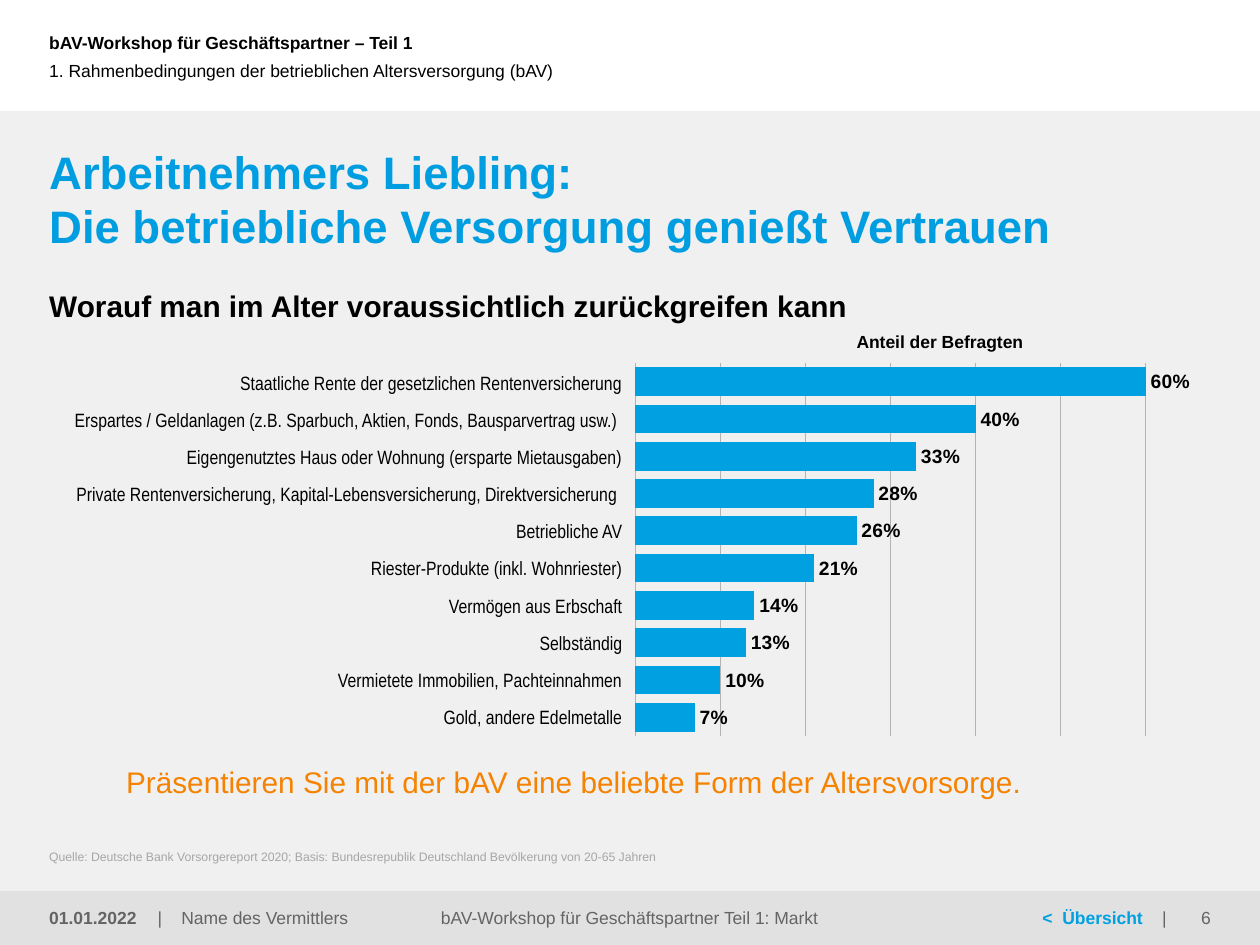
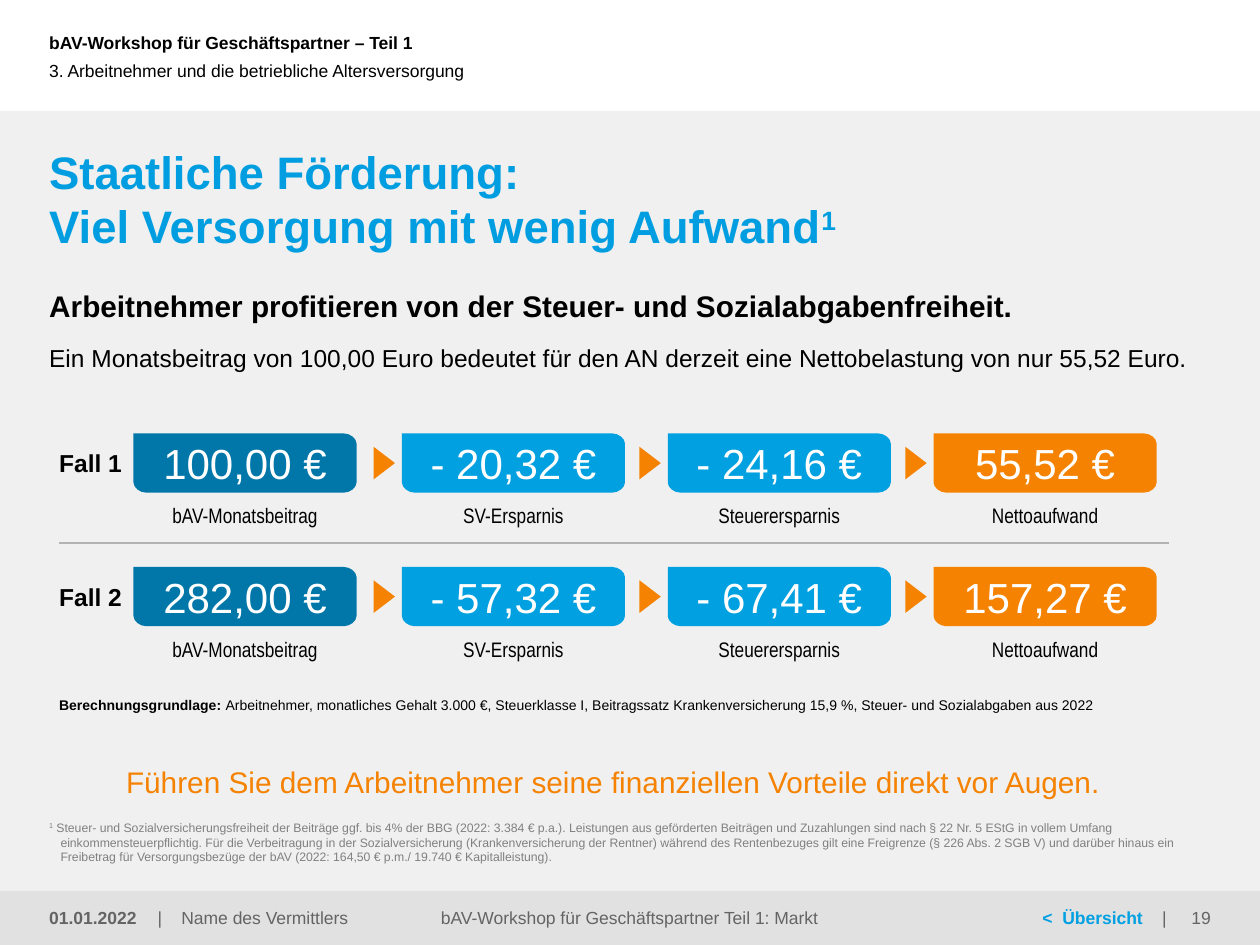
from lxml.etree import SubElement
from pptx import Presentation
from pptx.chart.data import CategoryChartData
from pptx.dml.color import RGBColor
from pptx.enum.chart import XL_CHART_TYPE as ChartType, XL_LABEL_POSITION as LabelPosition
from pptx.enum.shapes import MSO_CONNECTOR as Connector, MSO_SHAPE as Preset
from pptx.enum.text import MSO_ANCHOR as Anchor, MSO_AUTO_SIZE as AutoSize, PP_ALIGN as Align
from pptx.oxml.ns import qn
from pptx.util import Inches, Pt

# ---- Content ----
WORKSHOP = "bAV-Workshop für Geschäftspartner – Teil 1"
DATE = "01.01.2022"
FOOTER = "bAV-Workshop für Geschäftspartner Teil 1: Markt"

TRUST = {
    "title": ["Arbeitnehmers Liebling:\vDie betriebliche Versorgung genießt Vertrauen"],
    "chapter": ["1. Rahmenbedingungen der betrieblichen Altersversorgung (bAV)"],
    "headline": ["Worauf man im Alter voraussichtlich zurückgreifen kann"],
    "message": ["Präsentieren Sie mit der bAV eine beliebte Form der Altersvorsorge."],
    "note": ["Quelle: Deutsche Bank Vorsorgereport 2020; "
             "Basis: Bundesrepublik Deutschland Bevölkerung von 20-65 Jahren"],
    "number": "6",
}
CHART_HEADING = "Anteil der Befragten"
SHARES = [
    ("Staatliche Rente der gesetzlichen Rentenversicherung", 0.60),
    ("Erspartes / Geldanlagen (z.B. Sparbuch, Aktien, Fonds, Bausparvertrag usw.) ", 0.40),
    ("Eigengenutztes Haus oder Wohnung (ersparte Mietausgaben)", 0.33),
    ("Private Rentenversicherung, Kapital-Lebensversicherung, Direktversicherung ", 0.28),
    ("Betriebliche AV", 0.26),
    ("Riester-Produkte (inkl. Wohnriester)", 0.21),
    ("Vermögen aus Erbschaft", 0.14),
    ("Selbständig", 0.13),
    ("Vermietete Immobilien, Pachteinnahmen", 0.10),
    ("Gold, andere Edelmetalle", 0.07),
]

SUPER = {"raised": True}
SUBSIDY = {
    "title": ["Staatliche Förderung:\vViel Versorgung mit wenig Aufwand", ("1", SUPER)],
    "chapter": ["3. Arbeitnehmer und die betriebliche Altersversorgung"],
    "headline": ["Arbeitnehmer profitieren von der Steuer- und Sozialabgabenfreiheit."],
    "message": ["Führen Sie dem Arbeitnehmer seine finanziellen Vorteile direkt vor Augen."],
    "note": [("1", SUPER),
             " Steuer- und Sozialversicherungsfreiheit der Beiträge ggf. bis 4% der BBG "
             "(2022: 3.384 € p.a.). Leistungen aus geförderten Beiträgen und Zuzahlungen sind "
             "nach § 22 Nr. 5 EStG in vollem Umfang einkommensteuerpflichtig. Für die "
             "Verbeitragung in der Sozialversicherung (Krankenversicherung der Rentner) während "
             "des Rentenbezuges gilt eine Freigrenze (§ 226 Abs. 2 SGB V) und darüber hinaus ein "
             "Freibetrag für Versorgungsbezüge der bAV (2022: 164,50 € p.m./ 19.740 € "
             "Kapitalleistung)."],
    "number": "19",
}
INTRO = ("Ein Monatsbeitrag von 100,00 Euro bedeutet für den AN derzeit "
         "eine Nettobelastung von nur 55,52 Euro.")
BASIS = [("Berechnungsgrundlage: ", {"bold": True}),
         "Arbeitnehmer, monatliches Gehalt 3.000 €, Steuerklasse I, Beitragssatz "
         "Krankenversicherung 15,9 %, Steuer- und Sozialabgaben aus 2022"]
# Caption, colour and left edge of each column
STEPS = [("bAV-Monatsbeitrag", "0077A8", 1.06), ("SV-Ersparnis", "00A0E1", 3.19),
         ("Steuerersparnis", "00A0E1", 5.3), ("Nettoaufwand", "F58200", 7.41)]
CASES = {
    "Fall 1": ["100,00 €", "- 20,32 €", "- 24,16 €", "55,52 €"],
    "Fall 2": ["282,00 €", "- 57,32 €", "- 67,41 €", "157,27 €"],
}

# ---- Shared look ----
WIDTH, HEIGHT = 10, 7.5
MARGIN = 0.39
HEADER_BOTTOM, FOOTER_TOP = 0.88, 7.07
FOOTER_HEIGHT = HEIGHT - FOOTER_TOP
BLUE, ORANGE, BLACK, WHITE = "00A0E1", "F58200", "000000", "FFFFFF"
DARK_GREY, LINE_GREY = "646464", "B3B3B3"
SANS, NARROW = "Arial", "Arial Narrow"
LINK = {"color": BLUE, "bold": True}
# One space widened by character spacing, in points
WIDE_GAP, SMALL_GAP = (" ", {"spacing": 8.3}), (" ", {"spacing": 2.8})

# Placeholder index: content key, position, text style
PLACEHOLDERS = {
    0: ("title", (MARGIN, 1.14, 9.22, 0.55), dict(size=26, color="009EE0", bold=True)),
    1: ("headline", (MARGIN, 2.28, 9.22, 0.29), dict(size=17, bold=True)),
    2: ("note", (MARGIN, 6.74, 9.21, 0.12), dict(size=7, anchor=Anchor.BOTTOM)),
    3: ("message", (1, 5.9, 8.61, 0.68),
        dict(size=17, color=ORANGE, anchor=Anchor.MIDDLE, insets=(0, 0, 0, 0.08))),
    4: ("chapter", (0, 0.25, 7.15, 0.63),
        dict(anchor=Anchor.MIDDLE, insets=(MARGIN, 0, 0, 0.01))),
}


def rgb(value):
    return RGBColor.from_string(value)


def place(shape, left, top, width, height):
    shape.left, shape.top = Inches(left), Inches(top)
    shape.width, shape.height = Inches(width), Inches(height)


def style_font(font, size, color=BLACK, bold=False, name=SANS):
    font.name, font.size, font.bold = name, Pt(size), bold
    font.color.rgb = rgb(color)


def write(shape, spans, size=10, color=BLACK, bold=False, name=SANS, align=Align.LEFT,
          anchor=Anchor.TOP, insets=(0, 0, 0, 0), hanging=0):
    """Fill a shape with one paragraph made of styled spans."""
    frame = shape.text_frame
    frame.auto_size, frame.word_wrap = AutoSize.NONE, True
    frame.vertical_anchor = anchor
    (frame.margin_left, frame.margin_top,
     frame.margin_right, frame.margin_bottom) = map(Inches, insets)

    para = frame.paragraphs[0]
    props = para._p.get_or_add_pPr()
    props.set("marL", str(Inches(hanging)))
    props.set("indent", str(-Inches(hanging)))
    SubElement(props, qn("a:buNone"))
    para.alignment = align
    para.space_before = para.space_after = Pt(0)

    for index, span in enumerate(spans):
        text, changes = span if isinstance(span, tuple) else (span, {})
        done = len(para.runs)
        if index == 0:
            para.text = text
        else:
            para.add_run().text = text
        for run in para.runs[done:]:
            style_font(run.font, size, changes.get("color", color),
                       changes.get("bold", bold), name)
            if changes.get("raised"):
                run._r.get_or_add_rPr().set("baseline", "30000")
            if "spacing" in changes:
                run._r.get_or_add_rPr().set("spc", str(round(changes["spacing"] * 100)))
    for line_break in para._p.findall(qn("a:br")):
        SubElement(line_break, qn("a:rPr"), sz=str(size * 100))


def add_text(page, area, spans, **style):
    box = page.shapes.add_textbox(*map(Inches, area))
    write(box, [spans] if isinstance(spans, str) else spans, **style)


def paint(shape, color):
    shape.shadow.inherit = False
    shape.fill.solid()
    shape.fill.fore_color.rgb = rgb(color)
    shape.line.fill.background()


def add_page(deck, content, note_style):
    """Create a page with bands, placeholders, header and footer."""
    page = deck.slides.add_slide(deck.slide_layouts[4])
    page.background.fill.solid()
    page.background.fill.fore_color.rgb = rgb(WHITE)

    # Bands lie behind the placeholders
    bands = [(HEADER_BOTTOM, "F0F0F0"), (FOOTER_TOP, "E1E1E1")]
    for depth, (top, color) in enumerate(bands, start=2):
        area = (0, top, WIDTH, HEIGHT - top)
        band = page.shapes.add_shape(Preset.RECTANGLE, *map(Inches, area))
        paint(band, color)
        page.shapes.element.insert(depth, band.element)

    for placeholder in page.placeholders:
        key, area, style = PLACEHOLDERS[placeholder.placeholder_format.idx]
        place(placeholder, *area)
        write(placeholder, content[key], **style, **(note_style if key == "note" else {}))

    add_text(page, (0, 0, 6.98, 0.67), WORKSHOP, bold=True, anchor=Anchor.MIDDLE,
             insets=(MARGIN, 0.05, 0.1, 0.05))

    # Footer parts: left, width, spans, style
    footer = [
        (0, 1.22, DATE, dict(bold=True, insets=(MARGIN, 0.05, 0.1, 0.05))),
        (1.25, 2.42, ["|", WIDE_GAP, "Name des Vermittlers"], {}),
        (3.02, 3.95, FOOTER, dict(align=Align.CENTER)),
        (6.88, 2.42, [("<", LINK), SMALL_GAP, ("Übersicht", LINK), WIDE_GAP, "|"],
         dict(align=Align.RIGHT, insets=(0, 0, 0.04, 0))),
        (9.06, 0.94, content["number"],
         dict(align=Align.RIGHT, insets=(0.1, 0.05, MARGIN, 0.05))),
    ]
    for left, width, spans, style in footer:
        add_text(page, (left, FOOTER_TOP, width, FOOTER_HEIGHT), spans,
                 color=DARK_GREY, anchor=Anchor.MIDDLE, **style)
    return page


def add_share_chart(page):
    data = CategoryChartData(number_format="0%")
    data.categories = [str(rank) for rank in range(1, len(SHARES) + 1)]
    data.add_series("Series 1", [share for _, share in SHARES])
    area = (4.94, 2.76, 4.61, 3.19)
    chart = page.shapes.add_chart(ChartType.BAR_CLUSTERED, *map(Inches, area), data).chart
    chart.has_legend = chart.has_title = False
    style_font(chart.font, 11.8, name=NARROW)

    chart.category_axis.reverse_order = True
    chart.category_axis.visible = False
    scale = chart.value_axis
    scale.minimum_scale, scale.maximum_scale, scale.major_unit = 0, 0.66, 0.1
    scale.has_major_gridlines = True
    scale.major_gridlines.format.line.color.rgb = rgb(LINE_GREY)
    scale.major_gridlines.format.line.width = Pt(0.75)
    scale.visible = False

    plot = chart.plots[0]
    plot.gap_width, plot.vary_by_categories = 30, False
    bars = plot.series[0]
    bars.format.fill.solid()
    bars.format.fill.fore_color.rgb = rgb(BLUE)
    labels = bars.data_labels
    labels.show_value, labels.position = True, LabelPosition.OUTSIDE_END
    labels.number_format, labels.number_format_is_linked = "0%", False
    style_font(labels.font, 11, bold=True)

    # Fixed inner plot area so bars meet their row labels
    plot_area = chart._chartSpace.chart.plotArea
    for old in plot_area.findall(qn("c:layout")):
        plot_area.remove(old)
    layout = SubElement(plot_area, qn("c:layout"))
    plot_area.insert(0, layout)
    manual = SubElement(layout, qn("c:manualLayout"))
    settings = [("layoutTarget", "inner"), ("xMode", "edge"), ("yMode", "edge"),
                ("x", "0.022"), ("y", "0.038"), ("w", "0.967"), ("h", "0.928")]
    for tag, value in settings:
        SubElement(manual, qn("c:" + tag), val=value)


def add_card(page, left, top, width, height, color, amount):
    """Amount card with a square top left corner and three round ones."""
    right, bottom = left + width, top + height
    far_x, far_y = 0.1, 0.08
    near_x, near_y = far_x / 2, far_y / 2
    # Each corner: start, two control points, end
    corners = [
        (right - far_x, top), (right - near_x, top), (right, top + near_y), (right, top + far_y),
        (right, bottom - far_y), (right, bottom - near_y),
        (right - near_x, bottom), (right - far_x, bottom),
        (left + far_x, bottom), (left + near_x, bottom),
        (left, bottom - near_y), (left, bottom - far_y),
    ]
    builder = page.shapes.build_freeform(Inches(left), Inches(top))
    builder.add_line_segments([(Inches(x), Inches(y)) for x, y in corners], close=True)
    card = builder.convert_to_shape()

    # Turn the last three points of each corner into one curve
    lines = list(card._element.iter(qn("a:lnTo")))
    for start in range(0, len(corners), 4):
        curve = SubElement(lines[start].getparent(), qn("a:cubicBezTo"))
        lines[start].addnext(curve)
        for line in lines[start + 1:start + 4]:
            curve.append(line[0])
            line.getparent().remove(line)
    paint(card, color)
    write(card, [amount], size=24, color=WHITE, align=Align.CENTER, anchor=Anchor.MIDDLE)


def build_trust(deck):
    page = add_page(deck, TRUST, dict(color="A6A6A6"))
    add_share_chart(page)
    add_text(page, (6.62, 2.63, 1.5, 0.13), CHART_HEADING, bold=True, align=Align.RIGHT)
    for row, (label, _) in enumerate(SHARES):
        add_text(page, (0.37, 2.95 + row * 0.295, 4.57, 0.17), label, size=11, name=NARROW,
                 align=Align.RIGHT, anchor=Anchor.MIDDLE)


def build_subsidy(deck):
    page = add_page(deck, SUBSIDY, dict(color="808080", hanging=0.09))
    add_text(page, (MARGIN, 2.72, 9.1, 0.24), INTRO, size=14)
    add_text(page, (0.37, 5.48, 8.95, 0.24), BASIS, size=8, insets=(0.1, 0.05, 0.1, 0.05))

    # One row per case, one column per step
    first_top, row_height = 3.44, 1.06
    card_width, card_height = 1.77, 0.47
    for row, (case, amounts) in enumerate(CASES.items()):
        top = first_top + row * row_height
        add_text(page, (0.47, top + 0.12, 0.58, 0.24), case, size=14, bold=True)
        for step, ((caption, color, left), amount) in enumerate(zip(STEPS, amounts)):
            add_card(page, left, top, card_width, card_height, color, amount)
            add_text(page, (left, top + 0.55, card_width, 0.2), caption, size=12,
                     name=NARROW, align=Align.CENTER)
            if step:
                area = (left - 0.27, top + 0.15, 0.26, 0.17)
                arrow = page.shapes.add_shape(Preset.FLOWCHART_MERGE, *map(Inches, area))
                arrow.rotation = 270
                paint(arrow, ORANGE)

    # Divider between the cases
    ends = (0.47, 4.31, 9.28, 4.31)
    divider = page.shapes.add_connector(Connector.STRAIGHT, *map(Inches, ends))
    divider.line.color.rgb = rgb(LINE_GREY)
    divider.line.width = Pt(1)
    SubElement(divider._element.spPr, qn("a:effectLst"))


def main():
    deck = Presentation()
    deck.slide_width, deck.slide_height = Inches(WIDTH), Inches(HEIGHT)
    build_trust(deck)
    build_subsidy(deck)
    deck.save("out.pptx")


if __name__ == "__main__":
    main()
